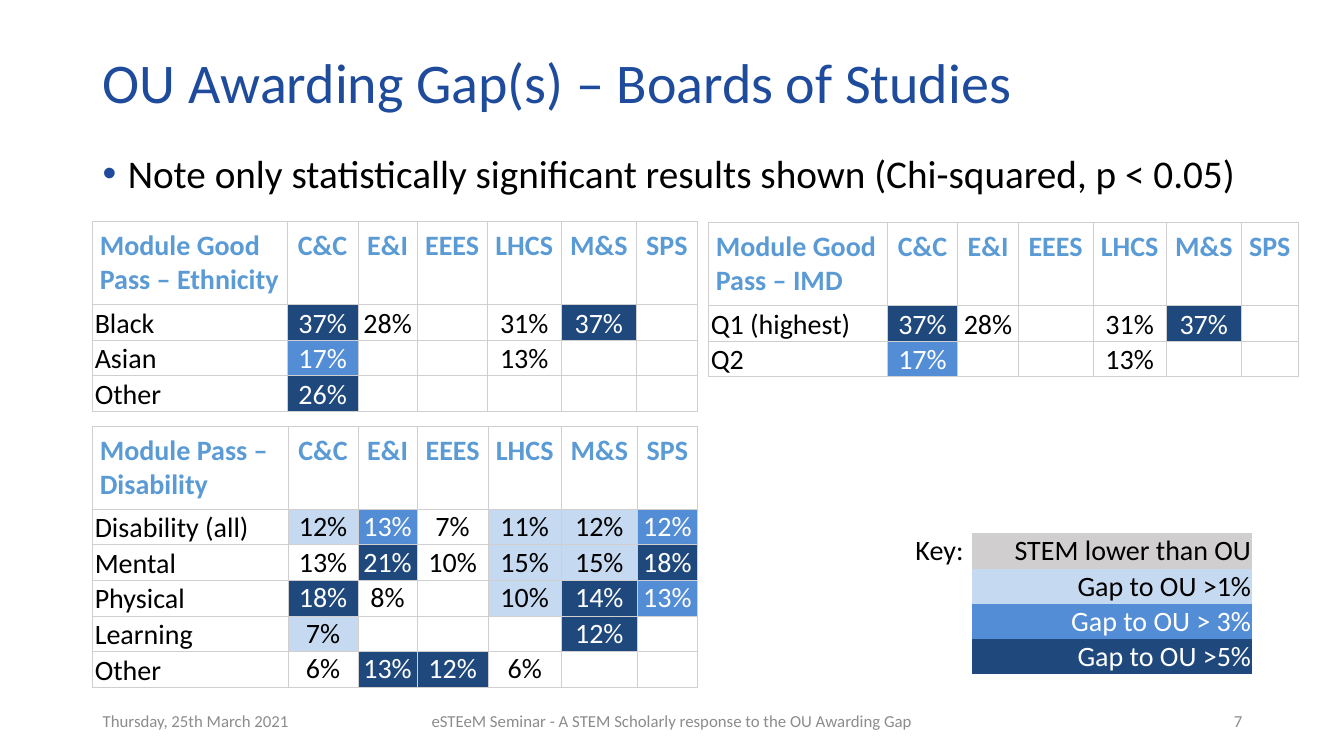
from lxml.etree import SubElement
from pptx import Presentation
from pptx.dml.color import RGBColor
from pptx.enum.text import MSO_ANCHOR, PP_ALIGN
from pptx.oxml.ns import qn
from pptx.util import Pt

PX = 9144  # 100 px to the inch
FONT = "Calibri"
BLACK, WHITE, GREY = "000000", "FFFFFF", "8C8C8C"
TITLE_BLUE, HEADER_BLUE, BORDER = "1E4B9B", "5B9BD5", "D0CECE"
LOWER, OVER_1, OVER_3, OVER_5 = "D0CECE", "C5D9F1", "538DD5", "1F497D"
GAP_FILLS = {"1": OVER_1, "3": OVER_3, "5": OVER_5}
NO_STYLE = "{2D5ABB26-0587-4C30-8999-92F81FD0307C}"
BOARDS = ["C&C", "E&I", "EEES", "LHCS", "M&S", "SPS"]
HEADER_HEIGHT, ROW_HEIGHT = 82, 35

# In the results, "37% 5" means 37% with a gap to OU of more than 5%.
ETHNICITY = [
    ["Black", "37% 5", "28%", "", "31%", "37% 5", ""],
    ["Asian", "17% 3", "", "", "13%", "", ""],
    ["Other", "26% 5", "", "", "", "", ""],
]
DISABILITY = [
    ["Disability (all)", "12% 1", "13% 3", "7%", "11% 1", "12% 1", "12% 3"],
    ["Mental", "13%", "21% 5", "10%", "15% 1", "15% 1", "18% 5"],
    ["Physical", "18% 5", "8%", "", "10% 1", "14% 5", "13% 3"],
    ["Learning", "7% 1", "", "", "", "12% 5", ""],
    ["Other", "6%", "13% 5", "12% 5", "6%", "", ""],
]
DEPRIVATION = [
    ["Q1 (highest)", "37% 5", "28%", "", "31%", "37% 5", ""],
    ["Q2", "17% 3", "", "", "13%", "", ""],
]
KEY = [
    ("Key:", "STEM lower than OU", LOWER),
    ("", "Gap to OU >1%", OVER_1),
    ("", "Gap to OU > 3%", OVER_3),
    ("", "Gap to OU >5%", OVER_5),
]


def rgb(colour):
    return RGBColor.from_string(colour)


def text_on(fill):
    return WHITE if fill in (OVER_3, OVER_5) else BLACK


def write(text_frame, text, size, colour, align=PP_ALIGN.LEFT, bold=False):
    """Fill a text frame with one formatted paragraph."""
    text_frame.text = text
    paragraph = text_frame.paragraphs[0]
    paragraph.alignment = align
    for run in paragraph.runs:
        run.font.name, run.font.size, run.font.bold = FONT, Pt(size), bold
        run.font.color.rgb = rgb(colour)
    return paragraph


def add_title(slide, left, top, width, height):
    title = slide.shapes.title
    title.left, title.top = left * PX, top * PX
    title.width, title.height = width * PX, height * PX
    title.text_frame.vertical_anchor = MSO_ANCHOR.MIDDLE
    paragraph = write(title.text_frame, "OU Awarding Gap(s) – Boards of Studies",
                      40, TITLE_BLUE)
    paragraph.line_spacing = 0.9


def add_text_box(slide, left, top, width, height):
    box = slide.shapes.add_textbox(left * PX, top * PX, width * PX, height * PX)
    box.text_frame.word_wrap = True
    return box.text_frame


def add_note(slide, left, top, width, height):
    paragraph = write(
        add_text_box(slide, left, top, width, height),
        "Note only statistically significant results shown (Chi-squared, p < 0.05)",
        28, BLACK)
    paragraph.line_spacing = 0.9
    properties = paragraph._p.get_or_add_pPr()
    properties.set("marL", str(25 * PX))
    properties.set("indent", str(-25 * PX))
    bullet_colour = SubElement(properties, qn("a:buClr"))
    SubElement(bullet_colour, qn("a:srgbClr"), val=TITLE_BLUE)
    SubElement(properties, qn("a:buFont"), typeface="Arial")
    SubElement(properties, qn("a:buChar"), char="•")


def add_footer(slide, left, top, width, height):
    side, middle = 300, 523
    parts = [
        (left, side, "Thursday, 25th March 2021", PP_ALIGN.LEFT),
        (left + (width - middle) // 2, middle,
         "eSTEeM Seminar - A STEM Scholarly response to the OU Awarding Gap",
         PP_ALIGN.CENTER),
        (left + width - side, side, "7", PP_ALIGN.RIGHT),
    ]
    for part_left, part_width, text, align in parts:
        text_frame = add_text_box(slide, part_left, top, part_width, height)
        text_frame.vertical_anchor = MSO_ANCHOR.MIDDLE
        write(text_frame, text, 12, GREY, align)


def add_plain_table(slide, left, top, widths, heights):
    """Add a table without a style and with the given column and row sizes."""
    frame = slide.shapes.add_table(len(heights), len(widths), left * PX, top * PX,
                                   sum(widths) * PX, sum(heights) * PX)
    table = frame.table
    table.first_row = table.horz_banding = False
    table._tbl.tblPr.find(qn("a:tableStyleId")).text = NO_STYLE
    for column, width in zip(table.columns, widths):
        column.width = width * PX
    for row, height in zip(table.rows, heights):
        row.height = height * PX
    return table


def set_cell(cell, fill, margin, bottom=0, anchor=MSO_ANCHOR.TOP):
    cell.margin_left = cell.margin_right = cell.margin_top = margin * PX
    cell.margin_bottom = bottom * PX
    cell.vertical_anchor = anchor
    if fill:
        cell.fill.solid()
        cell.fill.fore_color.rgb = rgb(fill)
    else:
        cell.fill.background()


def add_borders(cell):
    properties = cell._tc.get_or_add_tcPr()
    for side in ("a:lnL", "a:lnR", "a:lnT", "a:lnB"):
        line = SubElement(properties, qn(side), w=str(Pt(0.5)))
        fill = SubElement(line, qn("a:solidFill"))
        SubElement(fill, qn("a:srgbClr"), val=BORDER)


def add_results(slide, left, top, widths, heading, results,
                margin=2, anchor=MSO_ANCHOR.TOP):
    """Add a table of awarding gaps, with values shaded by their gap to OU."""
    heights = [HEADER_HEIGHT] + [ROW_HEIGHT] * len(results)
    table = add_plain_table(slide, left, top, widths, heights)
    for r, row in enumerate([[heading] + BOARDS] + results):
        for c, entry in enumerate(row):
            cell = table.cell(r, c)
            add_borders(cell)
            align = PP_ALIGN.CENTER if c else PP_ALIGN.LEFT
            if r == 0:
                set_cell(cell, None, 7, 7)
                write(cell.text_frame, entry, 20, HEADER_BLUE, align, True)
            elif c == 0:
                set_cell(cell, None, 2)
                write(cell.text_frame, entry, 20, BLACK)
            else:
                value, _, gap = entry.partition(" ")
                fill = GAP_FILLS.get(gap)
                set_cell(cell, fill, margin, anchor=anchor)
                write(cell.text_frame, value, 20, text_on(fill), align)


def add_key(slide, left, top, widths):
    table = add_plain_table(slide, left, top, widths, [ROW_HEIGHT] * len(KEY))
    for r, (label, meaning, fill) in enumerate(KEY):
        label_cell, meaning_cell = table.cell(r, 0), table.cell(r, 1)
        set_cell(label_cell, None, 1, anchor=MSO_ANCHOR.MIDDLE)
        set_cell(meaning_cell, fill, 1, anchor=MSO_ANCHOR.MIDDLE)
        write(label_cell.text_frame, label, 20, BLACK)
        write(meaning_cell.text_frame, meaning, 20, text_on(fill), PP_ALIGN.RIGHT)


def main():
    presentation = Presentation()
    presentation.slide_width, presentation.slide_height = 1333 * PX, 750 * PX
    slide = presentation.slides.add_slide(presentation.slide_layouts[5])
    left, width = 92, 1150
    add_title(slide, left, 40, width, 90)
    add_note(slide, left, 148, width, 55)
    add_footer(slide, left, 695, width, 40)
    add_results(slide, left, 220, [193, 70, 59, 69, 74, 74, 61],
                "Module Good Pass – Ethnicity", ETHNICITY)
    add_results(slide, left, 423, [194, 69, 59, 70, 73, 75, 60],
                "Module Pass – Disability", DISABILITY, 0, MSO_ANCHOR.MIDDLE)
    add_results(slide, 703, 221, [177, 70, 60, 74, 73, 74, 57],
                "Module Good Pass – IMD", DEPRIVATION)
    add_key(slide, 907, 529, [57, 278])
    presentation.save("out.pptx")


if __name__ == "__main__":
    main()
